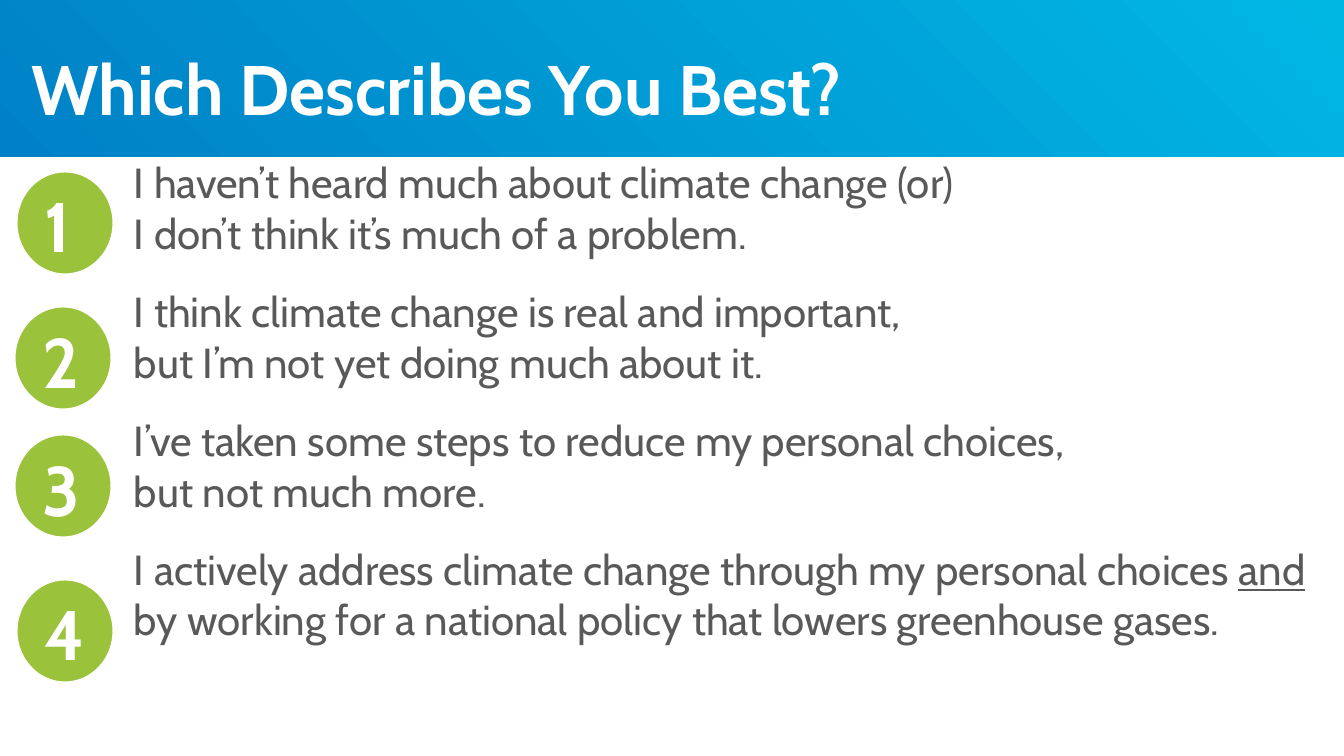
from dataclasses import dataclass

from pptx import Presentation
from pptx.dml.color import RGBColor as Rgb
from pptx.enum.shapes import MSO_SHAPE as Shape
from pptx.enum.text import MSO_ANCHOR as Anchor
from pptx.util import Pt

SCALE = 914400 / 100.8


@dataclass(frozen=True)
class Theme:
    font: str = "Cabin"
    white: str = "FFFFFF"
    text: str = "595959"
    badge: str = "9BC23B"
    dark: str = "0081C7"
    light: str = "00B7E4"
    big: int = 50
    body: int = 30
    gap: int = 20
    edge: float = 0.75


THEME = Theme()
HEAD = {"name": THEME.font, "size": Pt(THEME.big), "bold": True}
BODY = {"name": THEME.font, "size": Pt(THEME.body)}

TITLE = "Which Describes You Best?"
# Words between underscores are underlined.
CHOICES = [
    "I haven’t heard much about climate change (or) \n"
    "I don’t think it’s much of a problem.",
    "I think climate change is real and important, \n"
    "but I’m not yet doing much about it.",
    "I’ve taken some steps to reduce my personal choices, \n"
    "but not much more.",
    "I actively address climate change through my personal choices "
    "_and_ by working for a national policy that lowers greenhouse gases.",
]
BADGES = [(17, 172), (15, 307), (15, 435), (17, 580)]


def px(*nums):
    return [round(num * SCALE) for num in nums]


def style(run, form, color):
    for key, value in form.items():
        setattr(run.font, key, value)
    run.font.color.rgb = Rgb.from_string(color)


def fill_para(para, text, form, color):
    for order, part in enumerate(text.split("_")):
        for row, line in enumerate(part.split("\n")):
            if row:
                para.add_line_break()
            run = para.add_run()
            run.text = line
            style(run, form, color)
            if order % 2:
                run.font.underline = True


def add_text(shapes, area, pad, items, form, color):
    """Add a top-anchored text box with one paragraph per item."""
    frame = shapes.add_textbox(*px(*area)).text_frame
    side, top = px(*pad)
    format = {
        "word_wrap": True, "vertical_anchor": Anchor.TOP,
        "margin_left": side, "margin_right": side,
        "margin_top": top, "margin_bottom": top,
    }
    for key, value in format.items():
        setattr(frame, key, value)
    for order, item in enumerate(items):
        para = frame.add_paragraph() if order else frame.paragraphs[0]
        if order:
            para.space_before = Pt(THEME.gap)
        fill_para(para, item, form, color)
    return frame


def add_band(shapes):
    band = shapes.add_shape(Shape.RECTANGLE, *px(0, 0, 1344, 157))
    band.shadow.inherit = False
    band.line.fill.background()
    band.fill.gradient()
    band.fill.gradient_angle = 45
    for stop, color in zip(band.fill.gradient_stops, (THEME.dark, THEME.light)):
        stop.color.rgb = Rgb.from_string(color)
    for stop, place in zip(band.fill.gradient_stops, (0, 1)):
        stop.position = place


def add_badge(shapes, left, top, label):
    group = shapes.add_group_shape().shapes
    disc = group.add_shape(Shape.OVAL, *px(left, top, 96, 102))
    disc.shadow.inherit = False
    disc.fill.solid()
    disc.fill.fore_color.rgb = Rgb.from_string(THEME.badge)
    disc.line.color.rgb = Rgb.from_string(THEME.white)
    disc.line.width = Pt(THEME.edge)
    add_text(group, (left + 8, top + 1, 58, 98), (20, 10),
             [label], HEAD, THEME.white)


def main():
    deck = Presentation()
    deck.slide_width, deck.slide_height = px(1344, 756)
    shapes = deck.slides.add_slide(deck.slide_layouts[6]).shapes
    add_band(shapes)
    add_text(shapes, (18, 32, 1311, 84), (13, 13), [TITLE], HEAD, THEME.white)
    # The wide left indent keeps the choices clear of the badges.
    frame = add_text(shapes, (71, 144, 1273, 589), (13, 13),
                     CHOICES, BODY, THEME.text)
    for para in frame.paragraphs:
        para._p.get_or_add_pPr().set("marL", str(px(50)[0]))
    for order, (left, top) in enumerate(BADGES, 1):
        add_badge(shapes, left, top, str(order))
    deck.save("out.pptx")


if __name__ == "__main__":
    main()
